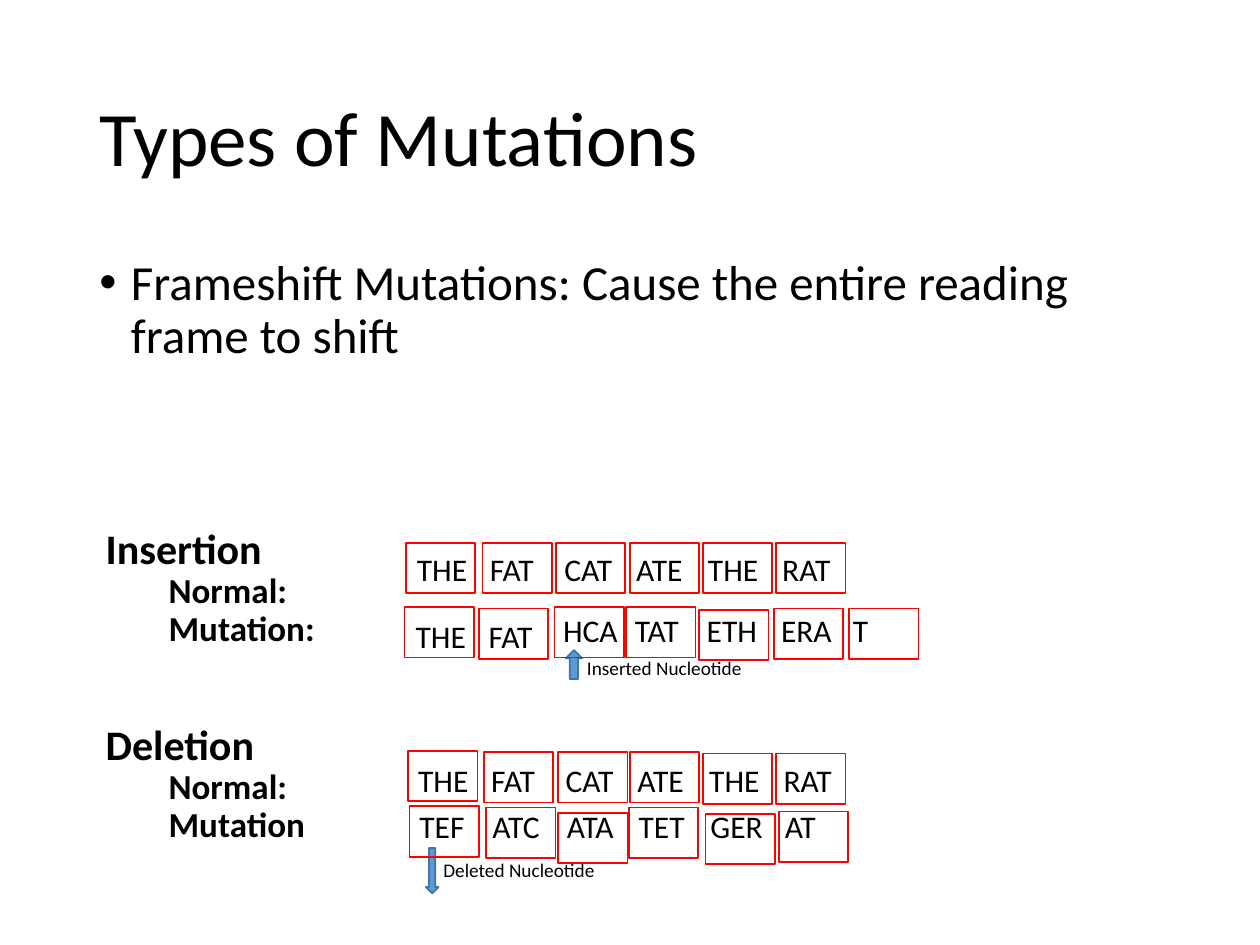
from dataclasses import dataclass
from typing import NamedTuple

from lxml.etree import SubElement
from pptx import Presentation
from pptx.dml.color import RGBColor
from pptx.enum.shapes import MSO_SHAPE
from pptx.enum.text import MSO_ANCHOR
from pptx.oxml.ns import qn
from pptx.slide import Slide
from pptx.util import Inches, Pt


@dataclass(frozen=True)
class Theme:
    font: str = "Calibri"
    text: RGBColor = RGBColor(0, 0, 0)
    frame: RGBColor = RGBColor(255, 0, 0)
    arrow: RGBColor = RGBColor(0x5B, 0x9B, 0xD5)
    arrow_edge: RGBColor = RGBColor(0x43, 0x73, 0x9E)
    title: int = 44
    body: int = 28
    heading: int = 24
    label: int = 20
    codon: int = 18
    note: int = 11


class Area(NamedTuple):
    left: float
    top: float
    width: float
    height: float


class Line(NamedTuple):
    words: str
    size: int
    bold: bool = False
    margin: float = 0
    hanging: float = 0
    before: float = 0
    spacing: float = 0.9
    bullet: str = ""


class Codon(NamedTuple):
    letters: str
    frame_left: float
    frame_top: float
    text_drop: float = 0


class Sequence(NamedTuple):
    left: float
    top: float
    codons: list[Codon]


class Marker(NamedTuple):
    area: Area
    rotation: int
    note: str
    note_area: Area


THEME = Theme()
CODON_OFFSETS = (0, 0.58, 1.17, 1.74, 2.31, 2.9, 3.47)
FRAME_WIDTH, FRAME_HEIGHT = 0.55, 0.4

SEQUENCES = [
    Sequence(3.21, 4.32, [
        Codon("THE", 3.22, 4.31), Codon("FAT", 3.83, 4.31), Codon("CAT", 4.41, 4.31),
        Codon("ATE", 5, 4.31), Codon("THE", 5.58, 4.31), Codon("RAT", 6.16, 4.31),
    ]),
    Sequence(3.2, 4.8, [
        Codon("THE", 3.21, 4.82, 0.05), Codon("FAT", 3.8, 4.83, 0.05),
        Codon("HCA", 4.4, 4.82), Codon("TAT", 4.97, 4.82), Codon("ETH", 5.55, 4.84),
        Codon("ERA", 6.14, 4.83), Codon("T", 6.74, 4.83),
    ]),
    Sequence(3.22, 5.99, [
        Codon("THE", 3.24, 5.96), Codon("FAT", 3.84, 5.97), Codon("CAT", 4.43, 5.97),
        Codon("ATE", 5, 5.97), Codon("THE", 5.58, 5.98), Codon("RAT", 6.16, 5.98),
    ]),
    Sequence(3.23, 6.36, [
        Codon("TEF", 3.25, 6.4), Codon("ATC", 3.86, 6.41), Codon("ATA", 4.43, 6.45),
        Codon("TET", 4.99, 6.41), Codon("GER", 5.6, 6.46), Codon("AT", 6.18, 6.44),
    ]),
]

MARKERS = [
    Marker(Area(4.49, 5.16, 0.13, 0.23), 0, "Inserted Nucleotide", Area(4.56, 5.16, 1.98, 0.29)),
    Marker(Area(3.38, 6.73, 0.1, 0.36), 180, "Deleted Nucleotide", Area(3.42, 6.76, 1.98, 0.29)),
]


def heading(words: str, before: float = 0) -> Line:
    return Line(words, THEME.heading, bold=True, margin=0.5, before=before)


def label(words: str) -> Line:
    return Line(words, THEME.label, bold=True, margin=1)


def add_text(page: Slide, area: Area, lines: list[Line], anchor: MSO_ANCHOR = MSO_ANCHOR.TOP) -> None:
    box = page.shapes.add_textbox(*map(Inches, area))
    frame = box.text_frame
    frame.word_wrap = True
    frame.vertical_anchor = anchor
    for index, line in enumerate(lines):
        para = frame.add_paragraph() if index else frame.paragraphs[0]
        para.line_spacing = line.spacing
        para.space_before = Pt(line.before)
        properties = para._p.get_or_add_pPr()
        properties.set("marL", str(Inches(line.margin)))
        properties.set("indent", str(Inches(line.hanging)))
        if line.bullet:
            SubElement(properties, qn("a:buFont")).set("typeface", "Arial")
            SubElement(properties, qn("a:buChar")).set("char", line.bullet)
        span = para.add_run()
        span.text = line.words
        span.font.name = THEME.font
        span.font.size = Pt(line.size)
        span.font.bold = line.bold
        span.font.color.rgb = THEME.text


def add_codon_text(page: Slide, sequence: Sequence) -> None:
    for offset, codon in zip(CODON_OFFSETS, sequence.codons):
        area = Area(sequence.left + offset, sequence.top + codon.text_drop, 0.68, 0.4)
        add_text(page, area, [Line(codon.letters, THEME.codon, spacing=1)])


def add_codon_frame(page: Slide, codon: Codon) -> None:
    area = Area(codon.frame_left, codon.frame_top, FRAME_WIDTH, FRAME_HEIGHT)
    frame = page.shapes.add_shape(MSO_SHAPE.RECTANGLE, *map(Inches, area))
    frame.shadow.inherit = False
    frame.fill.background()
    frame.line.color.rgb = THEME.frame
    frame.line.width = Pt(1)


def add_marker(page: Slide, marker: Marker) -> None:
    arrow = page.shapes.add_shape(MSO_SHAPE.UP_ARROW, *map(Inches, marker.area))
    arrow.shadow.inherit = False
    arrow.rotation = marker.rotation
    arrow.fill.solid()
    arrow.fill.fore_color.rgb = THEME.arrow
    arrow.line.color.rgb = THEME.arrow_edge
    arrow.line.width = Pt(1)
    add_text(page, marker.note_area, [Line(marker.note, THEME.note, spacing=1)])


def main() -> None:
    deck = Presentation()
    deck.slide_width, deck.slide_height = Inches(10), Inches(7.5)
    page = deck.slides.add_slide(deck.slide_layouts[6])

    add_text(page, Area(0.69, 0.4, 8.62, 1.45),
             [Line("Types of Mutations", THEME.title)], MSO_ANCHOR.MIDDLE)
    add_text(page, Area(0.69, 2, 8.62, 4.76), [
        Line("Frameshift Mutations: Cause the entire reading frame to shift", THEME.body,
             margin=0.25, hanging=-0.25, before=10, bullet="•"),
    ])
    add_text(page, Area(0.24, 4.14, 8.96, 2.65), [
        heading("Insertion"), label("Normal:"), label("Mutation:"),
        heading("Deletion", before=43), label("Normal:"), label("Mutation"),
    ])
    for sequence in SEQUENCES:
        add_codon_text(page, sequence)
    for marker in MARKERS:
        add_marker(page, marker)
    for sequence in SEQUENCES:
        for codon in sequence.codons:
            add_codon_frame(page, codon)

    deck.save("out.pptx")


if __name__ == "__main__":
    main()
